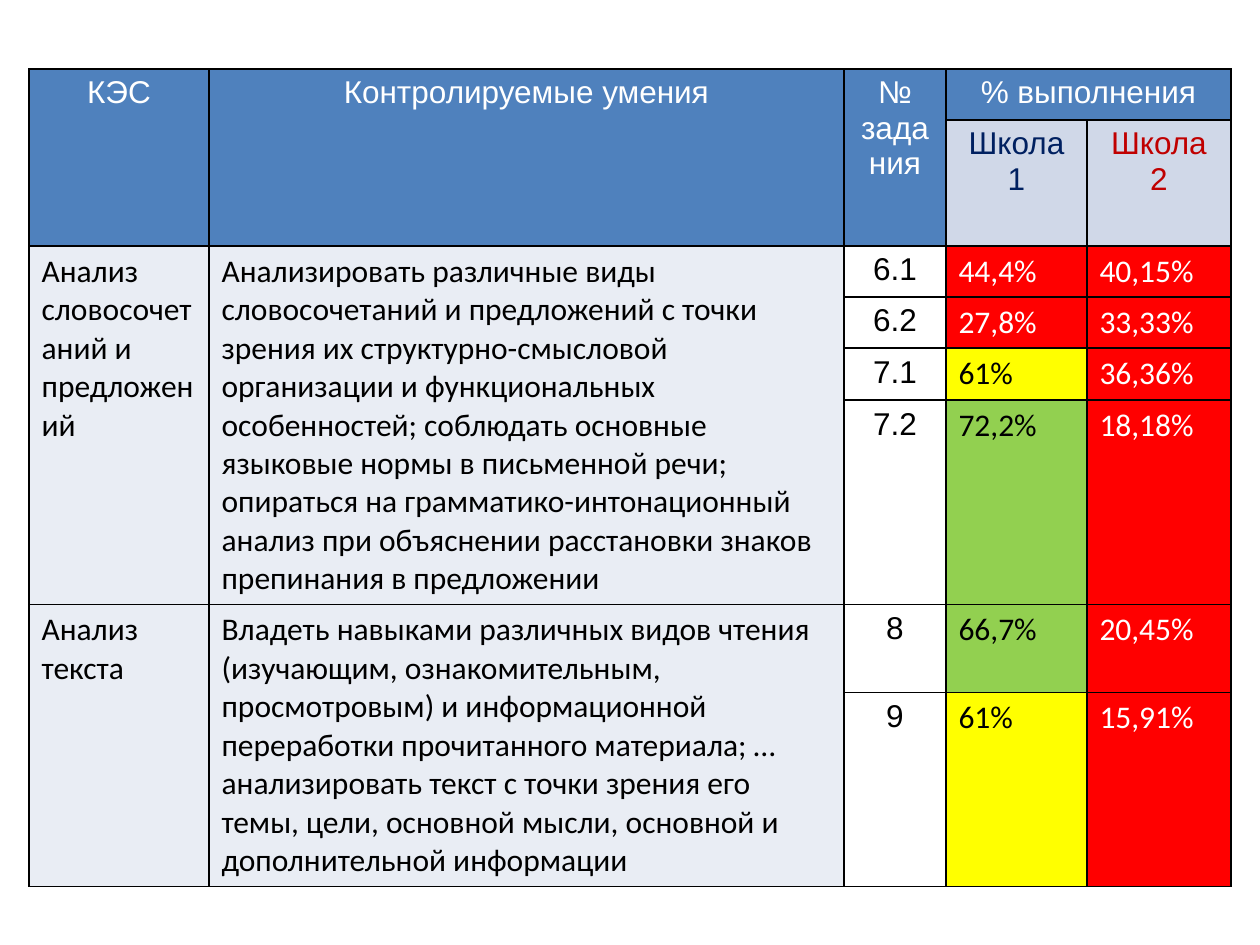
from dataclasses import dataclass

from lxml.etree import SubElement
from pptx import Presentation
from pptx.dml.color import RGBColor as Rgb
from pptx.enum.text import PP_ALIGN as Align
from pptx.oxml.ns import qn
from pptx.util import Pt

SCALE = 914400 / 126


def px(n):
    return round(n * SCALE)


@dataclass(frozen=True)
class Theme:
    head: str = "4F81BD"
    sub: str = "D0D8E8"
    band: str = "E9EDF4"
    low: str = "FF0000"
    mid: str = "FFFF00"
    high: str = "92D050"
    light: str = "FFFFFF"
    dark: str = "000000"
    navy: str = "002060"
    wine: str = "C00000"
    sans: str = "Arial"
    body: str = "Calibri"
    size: int = 18
    line: int = 1


class Deck:
    def __init__(self, theme):
        self.theme = theme
        self.prs = Presentation()
        self.prs.slide_width = px(1260)
        self.prs.slide_height = px(945)
        self.slide = self.prs.slides.add_slide(self.prs.slide_layouts[6])

    def table(self, left, top, cols, rows):
        frame = self.slide.shapes.add_table(
            len(rows), len(cols), px(left), px(top), px(sum(cols)), px(sum(rows)))
        grid = frame.table
        grid.first_row = grid.horz_banding = False
        for col, width in zip(grid.columns, cols):
            col.width = px(width)
        for row, height in zip(grid.rows, rows):
            row.height = px(height)
        for cell in grid.iter_cells():
            cell.fill.background()
            self.edge(cell)
        return grid

    def edge(self, cell):
        props = cell._tc.get_or_add_tcPr()
        for i, side in enumerate("LRTB"):
            line = SubElement(props, qn(f"a:ln{side}"), w=str(Pt(self.theme.line)))
            fill = SubElement(line, qn("a:solidFill"))
            SubElement(fill, qn("a:srgbClr"), val=self.theme.dark)
            props.insert(i, line)

    def cell(self, grid, row, col, text, fill, color, font, align=Align.LEFT, span=(1, 1)):
        cell = grid.cell(row, col)
        if span != (1, 1):
            cell.merge(grid.cell(row + span[0] - 1, col + span[1] - 1))
        if fill:
            cell.fill.solid()
            cell.fill.fore_color.rgb = Rgb.from_string(fill)
        cell.text_frame.text = text
        para = cell.text_frame.paragraphs[0]
        para.alignment = align
        style = para.runs[0].font
        style.name = font
        style.size = Pt(self.theme.size)
        style.color.rgb = Rgb.from_string(color)

    def save(self):
        self.prs.save("out.pptx")


HEADS = [
    ("КЭС", (2, 1)),
    ("Контролируемые умения", (2, 1)),
    ("№ задания", (2, 1)),
    ("% выполнения", (1, 2)),
]
SKILLS = [
    ("Анализ словосочетаний и предложений",
     "Анализировать различные виды словосочетаний и предложений с точки зрения "
     "их структурно-смысловой организации и функциональных особенностей; "
     "соблюдать основные языковые нормы в письменной речи; опираться на "
     "грамматико-интонационный анализ при объяснении расстановки знаков "
     "препинания в предложении",
     [("6.1", "44,4%", "low", "40,15%"),
      ("6.2", "27,8%", "low", "33,33%"),
      ("7.1", "61%", "mid", "36,36%"),
      ("7.2", "72,2%", "high", "18,18%")]),
    ("Анализ текста",
     "Владеть навыками различных видов чтения (изучающим, ознакомительным, "
     "просмотровым) и информационной переработки прочитанного материала; "
     "…анализировать текст с точки зрения его темы, цели, основной мысли, "
     "основной и дополнительной информации",
     [("8", "66,7%", "high", "20,45%"),
      ("9", "61%", "mid", "15,91%")]),
]


def main():
    look = Theme()
    deck = Deck(look)
    grid = deck.table(29, 69, [180, 635, 102, 141, 144],
                      [51, 126, 51, 51, 52, 199, 88, 189])

    for col, (text, span) in enumerate(HEADS):
        deck.cell(grid, 0, col, text, look.head, look.light, look.sans, Align.CENTER, span)
    for col, text, color in [(3, "Школа 1", look.navy), (4, "Школа 2", look.wine)]:
        deck.cell(grid, 1, col, text, look.sub, color, look.sans, Align.CENTER)

    row = 2
    for topic, skill, tasks in SKILLS:
        for col, text in enumerate((topic, skill)):
            deck.cell(grid, row, col, text, look.band, look.dark, look.body,
                      span=(len(tasks), 1))
        for task, first, grade, second in tasks:
            deck.cell(grid, row, 2, task, None, look.dark, look.sans, Align.CENTER)
            for col, text, level in [(3, first, grade), (4, second, "low")]:
                color = look.light if level == "low" else look.dark
                deck.cell(grid, row, col, text, getattr(look, level), color, look.body)
            row += 1

    deck.save()


if __name__ == "__main__":
    main()
